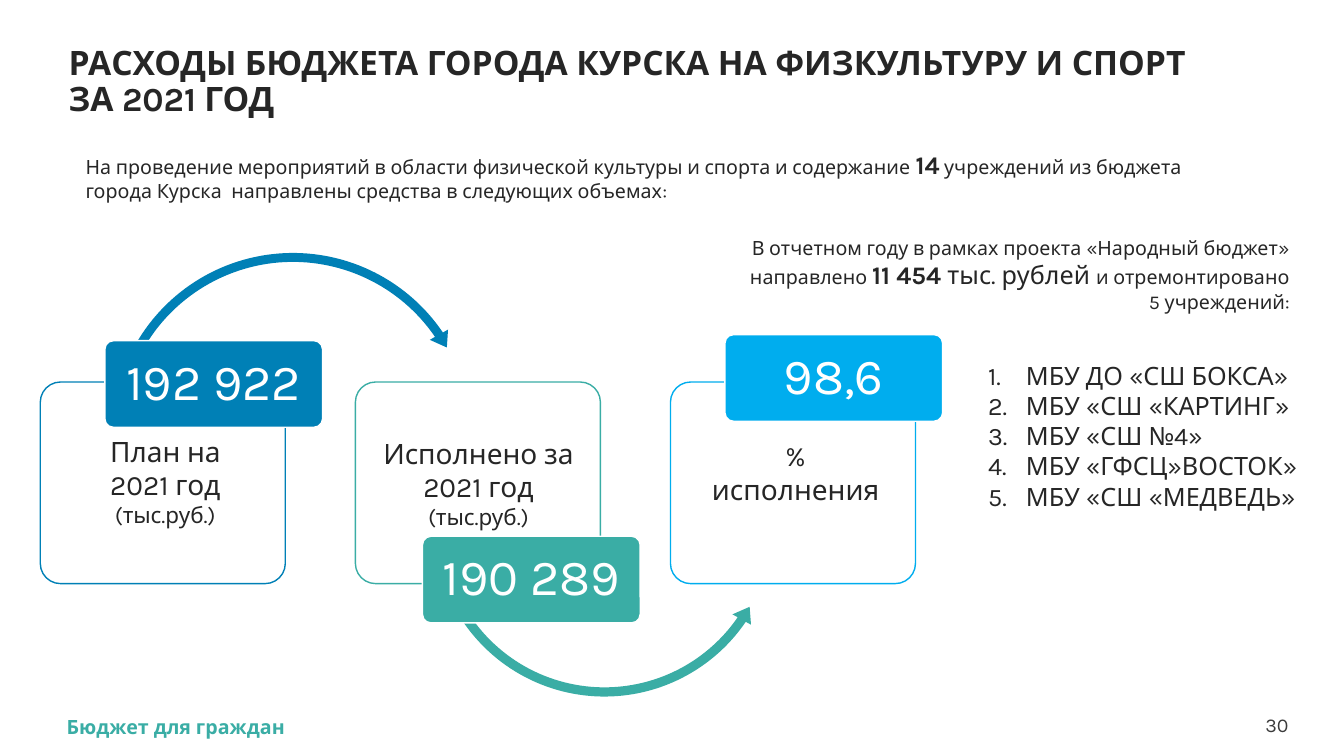
from lxml.etree import SubElement
from pptx import Presentation
from pptx.dml.color import RGBColor
from pptx.enum.shapes import MSO_SHAPE
from pptx.enum.text import MSO_ANCHOR, MSO_AUTO_SIZE, PP_ALIGN
from pptx.oxml.ns import qn
from pptx.util import Inches, Pt

COLORS = {
    "plan": "0080B6", "spent": "3AADA5", "share": "00ADEE",
    "ink": "262626", "page": "3C3C3C", "white": "FFFFFF",
}
FONT = "Karla"
NO_MARGINS = dict.fromkeys(
    ("margin_left", "margin_top", "margin_right", "margin_bottom"), 0)
CHIP_FRAME = {
    "margin_left": Inches(0.07), "margin_right": Inches(0.07),
    "margin_top": Inches(0.05), "margin_bottom": Inches(0.05),
    "vertical_anchor": MSO_ANCHOR.MIDDLE,
}

CARD_LEFT, CARD_TOP, CARD_STEP = 0.4, 3.79, 3.125
# kind, chip left and top, figure, label box, label paragraphs
INDICATORS = [
    ("plan", 1.04, 3.38, "192 922", (0.63, 4.26, 2.02, 1.08),
     [[("План на", 20)], [("2021 год ", 20), ("(тыс.руб.)", 16)]]),
    ("spent", 4.19, 5.32, "190 289", (3.54, 4.28, 2.41, 1.04),
     [[("Исполнено за", 20)], [("2021 год", 20)], [("(тыс.руб.)", 16)]]),
    ("share", 7.19, 3.32, "98,6", (6.77, 4.3, 2.24, 1.08),
     [[("%", 20)], [("исполнения", 20)]]),
]
SCHOOLS = ["МБУ ДО «СШ БОКСА»", "МБУ «СШ «КАРТИНГ»", "МБУ «СШ №4»",
           "МБУ «ГФСЦ»ВОСТОК»", "МБУ «СШ «МЕДВЕДЬ»"]


def rgb(name):
    return RGBColor.from_string(COLORS[name])


def apply(target, values):
    for name, value in values.items():
        setattr(target, name, value)


def place(holder, box):
    names = ("left", "top", "width", "height")
    apply(holder, dict(zip(names, map(Inches, box))))


def number(paragraph):
    properties = paragraph._p.get_or_add_pPr()
    properties.set("marL", str(Inches(0.375)))
    properties.set("indent", str(-Inches(0.375)))
    SubElement(properties, qn("a:buFont"), typeface="+mj-lt")
    SubElement(properties, qn("a:buAutoNum"), type="arabicPeriod")


def add_run(paragraph, color, text, size, bold=False):
    """A newline in the text becomes a line break."""
    for index, line in enumerate(text.split("\n")):
        if index:
            paragraph.add_line_break()
        run = paragraph.add_run()
        run.text = line
        apply(run.font, {"name": FONT, "size": Pt(size), "bold": bold})
        run.font.color.rgb = rgb(color)


def write(frame, paragraphs, color="ink", frame_format=None, numbered=False,
          **paragraph_format):
    """Each paragraph is a list of (text, size[, bold]) runs."""
    apply(frame, {"word_wrap": True, "auto_size": MSO_AUTO_SIZE.NONE,
                  **(frame_format or {})})
    for index, runs in enumerate(paragraphs):
        paragraph = frame.add_paragraph() if index else frame.paragraphs[0]
        apply(paragraph, {"space_before": Pt(0), **paragraph_format})
        if numbered:
            number(paragraph)
        for run in runs:
            add_run(paragraph, color, *run)


def add_text(slide, box, paragraphs, **formats):
    textbox = slide.shapes.add_textbox(*map(Inches, box))
    write(textbox.text_frame, paragraphs, **formats)


def add_figure(slide, preset, box, fill, line=None, adjustments=(0.1,)):
    figure = slide.shapes.add_shape(preset, *map(Inches, box))
    figure.shadow.inherit = False
    figure.fill.solid()
    figure.fill.fore_color.rgb = rgb(fill)
    if line:
        figure.line.color.rgb = rgb(line)
        figure.line.width = Pt(1)
    else:
        figure.line.fill.background()
    for index, value in enumerate(adjustments):
        figure.adjustments[index] = value
    return figure


def add_card(slide, index, kind):
    box = (CARD_LEFT + index * CARD_STEP, CARD_TOP, 2.43, 2)
    card = add_figure(slide, MSO_SHAPE.ROUNDED_RECTANGLE, box, "white", kind)
    fill_color = card.fill._xPr.find(qn("a:solidFill"))[0]
    SubElement(fill_color, qn("a:alpha"), val="90000")


def add_chip(slide, kind, left, top, figure):
    chip = add_figure(slide, MSO_SHAPE.ROUNDED_RECTANGLE,
                      (left, top, 2.16, 0.86), kind, "white")
    write(chip.text_frame, [[(figure, 36)]], "white", CHIP_FRAME,
          alignment=PP_ALIGN.CENTER, line_spacing=0.9)


def add_arc(slide, preset, box, kind, rotation, adjustments):
    arc = add_figure(slide, preset, box, kind, adjustments=adjustments)
    arc.rotation = rotation


def main():
    deck = Presentation()
    deck.slide_width, deck.slide_height = Inches(13.33), Inches(7.5)
    slide = deck.slides.add_slide(deck.slide_layouts[1])
    title, schools = slide.placeholders

    # Title and introduction
    place(title, (0.58, 0.44, 11.88, 0.76))
    heading = ("РАСХОДЫ БЮДЖЕТА ГОРОДА КУРСКА НА ФИЗКУЛЬТУРУ И СПОРТ\n"
               "ЗА 2021 ГОД")
    write(title.text_frame, [[(heading, 24, True)]],
          frame_format={"vertical_anchor": MSO_ANCHOR.MIDDLE},
          alignment=PP_ALIGN.LEFT, line_spacing=0.9)
    add_text(slide, (0.75, 1.43, 11.74, 0.64), [[
        ("На проведение мероприятий в области физической культуры и спорта "
         "и содержание ", 14),
        ("14", 18, True),
        (" учреждений из бюджета города Курска  направлены средства "
         "в следующих объемах:", 14)]])

    # People's budget project and its schools
    add_text(slide, (7.2, 2.29, 5.69, 0.88), [[
        ("В отчетном году в рамках проекта «Народный бюджет» направлено ", 14),
        ("11 454 ", 18, True), ("тыс. рублей ", 18),
        ("и отремонтировано 5 учреждений:", 14)]], alignment=PP_ALIGN.RIGHT)
    place(schools, (9.7, 3.52, 3.63, 1.92))
    write(schools.text_frame, [[(school, 18)] for school in SCHOOLS],
          numbered=True)

    # Indicators: cards, arcs between them, then figures and labels
    for index, (kind, *_) in enumerate(INDICATORS):
        add_card(slide, index, kind)
    add_arc(slide, MSO_SHAPE.LEFT_CIRCULAR_ARROW, (4.24, 3.46, 3.51, 3.51),
            "spent", 316.2, (0.026, 3.1, 46.9, 116.29, 0.03))
    add_arc(slide, MSO_SHAPE.CIRCULAR_ARROW, (1.05, 2.45, 3.71, 3.71),
            "plan", 40.3, (0.024, 2.93, 171.3, 101.74, 0.028))
    for kind, left, top, figure, label_box, label in INDICATORS:
        add_chip(slide, kind, left, top, figure)
        add_text(slide, label_box, label, alignment=PP_ALIGN.CENTER)

    # Footer
    add_text(slide, (0.66, 7.09, 11.88, 0.24),
             [[("Бюджет для граждан", 14, True)]], color="spent",
             frame_format=NO_MARGINS)
    add_text(slide, (12.53, 7.07, 0.25, 0.24), [[("30", 14)]], color="page",
             frame_format={**NO_MARGINS, "vertical_anchor": MSO_ANCHOR.MIDDLE},
             alignment=PP_ALIGN.RIGHT)

    deck.save("out.pptx")


if __name__ == "__main__":
    main()
